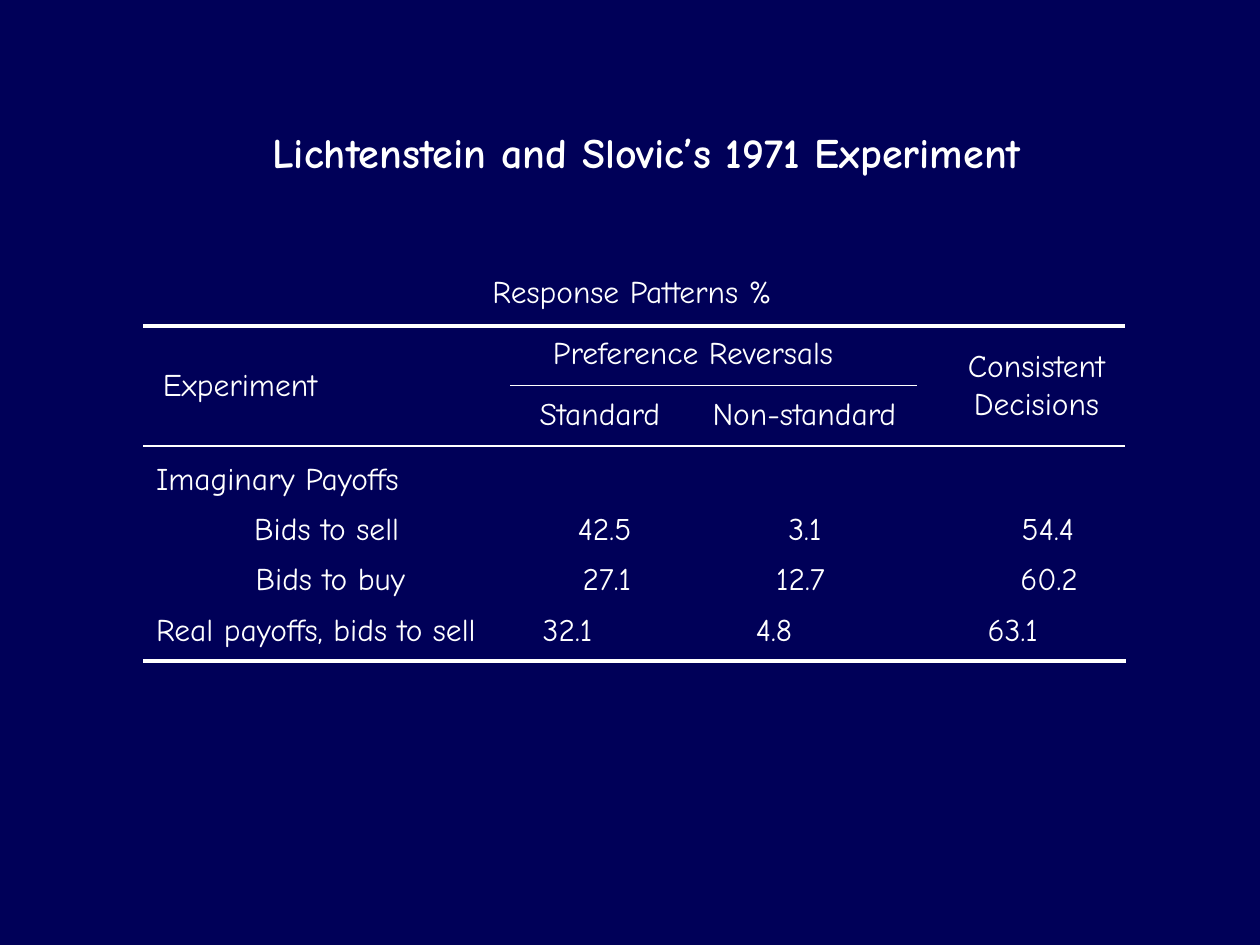
"""Build the slide on Lichtenstein and Slovic's 1971 preference reversal experiment."""
from lxml import etree
from pptx import Presentation
from pptx.dml.color import RGBColor
from pptx.enum.shapes import MSO_CONNECTOR
from pptx.enum.text import MSO_ANCHOR, PP_ALIGN
from pptx.oxml.ns import qn
from pptx.util import Pt

LEFT, CENTER = PP_ALIGN.LEFT, PP_ALIGN.CENTER
MIDDLE = MSO_ANCHOR.MIDDLE
STRAIGHT = MSO_CONNECTOR.STRAIGHT
WHITE, NAVY = "FFFFFF", "000058"
INSET = 7.2


def rgb(value):
    return RGBColor.from_string(value)


def add_text(text, x, y, w, h, align=LEFT, size=18, bold=False, stops=()):
    sp = slide.shapes.add_textbox(Pt(x), Pt(y), Pt(w), Pt(h))
    tf = sp.text_frame
    tf.word_wrap = True
    tf.vertical_anchor = MIDDLE
    p = tf.paragraphs[0]
    p.alignment = align
    r = p.add_run()
    r.text = text
    font = {"name": "Comic Neue", "size": Pt(size), "bold": bold}
    for key, value in font.items():
        setattr(r.font, key, value)
    r.font.color.rgb = rgb(WHITE)
    if stops:
        tabs = etree.SubElement(p._p.get_or_add_pPr(), qn("a:tabLst"))
        for stop in stops:
            pos = Pt(stop - x - INSET)
            etree.SubElement(tabs, qn("a:tab"), pos=str(pos), algn="l")


prs = Presentation()
prs.slide_width, prs.slide_height = Pt(720), Pt(540)
slide = prs.slides.add_slide(prs.slide_layouts[6])
fill = slide.background.fill
fill.solid()
fill.fore_color.rgb = rgb(NAVY)

add_text("Lichtenstein and Slovic’s 1971 Experiment", 63.4, 61.2, 612, 51.1,
         CENTER, 24, True)

headers = [
    ("Response Patterns %", 274.3, 152, 189.4, 28.8, LEFT, ()),
    ("Preference Reversals", 308.9, 186.5, 221, 28.8, LEFT, ()),
    ("Consistent Decisions", 524.2, 194.4, 136.1, 50.4, CENTER, ()),
    ("Standard\tNon-standard", 301.3, 221.8, 231, 28.8, LEFT, (407.3,)),
    ("Experiment", 77.4, 205.2, 119.6, 28.8, CENTER, ()),
]
for text, x, y, w, h, align, stops in headers:
    add_text(text, x, y, w, h, align, stops=stops)

rows = [
    (["Imaginary Payoffs"], 82.1, ()),
    (["Bids to sell", "42.5", "3.1", "54.4"], 138.2, (330.3, 450.6, 584)),
    (["Bids to buy", "27.1", "12.7", "60.2"], 139, (333, 443.6, 583.2)),
    (["Real payoffs, bids to sell", "32.1", "4.8", "63.1"], 82.1,
     (310.2, 432, 564.5)),
]
for i, (values, x, stops) in enumerate(rows):
    add_text("\t".join(values), x, 258.5 + 28.8 * i, 643 - x, 28.8, stops=stops)

rules = [(82, 643, 186.3, 2.25), (291.6, 524.2, 220.2, 0.75),
         (82, 643, 254.9, 0.75), (82, 643.5, 377.8, 2.25)]
for x1, x2, y, weight in rules:
    line = slide.shapes.add_connector(STRAIGHT, Pt(x1), Pt(y), Pt(x2), Pt(y))
    line.line.color.rgb = rgb(WHITE)
    line.line.width = Pt(weight)
    etree.SubElement(line._element.spPr, qn("a:effectLst"))

prs.save("out.pptx")
